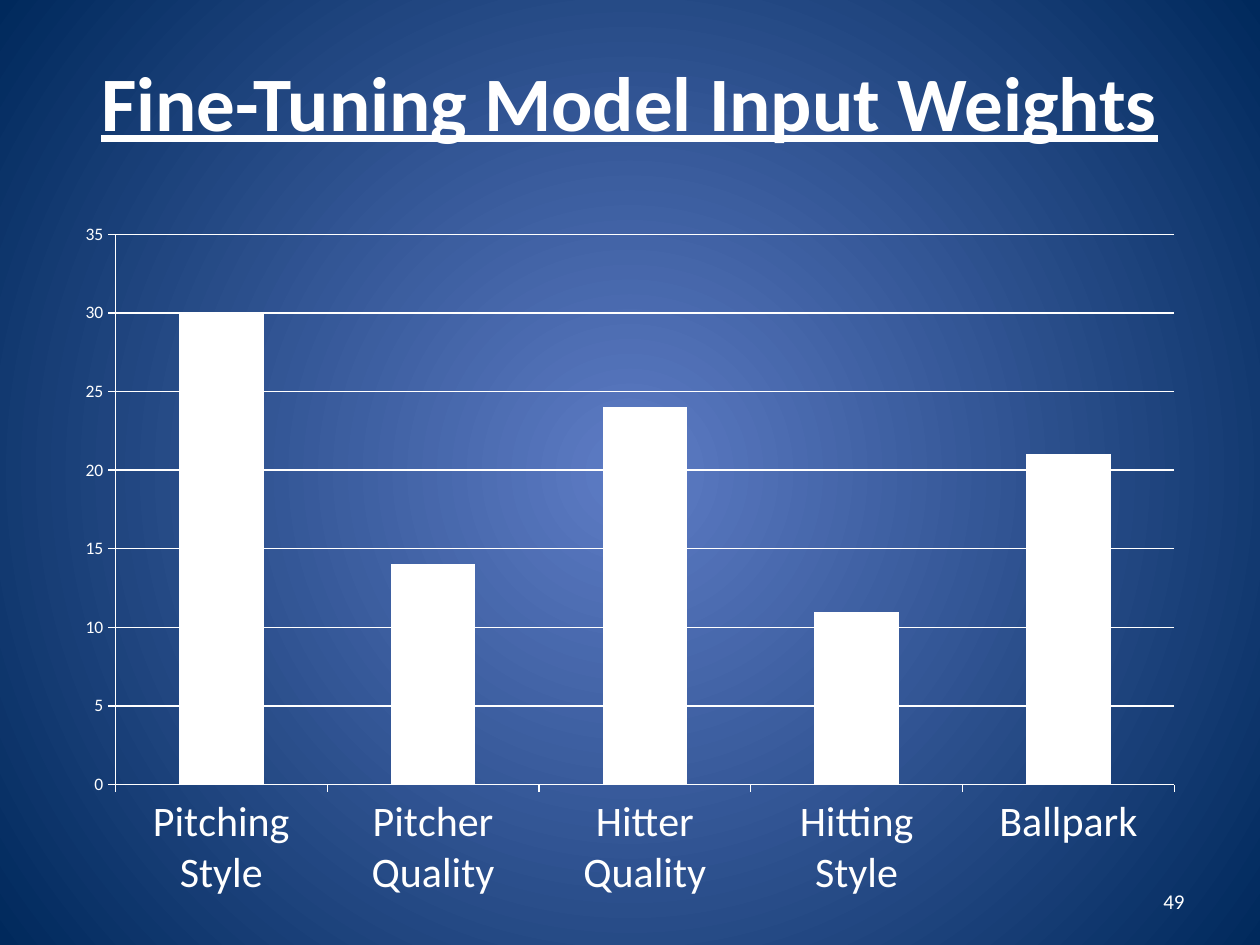
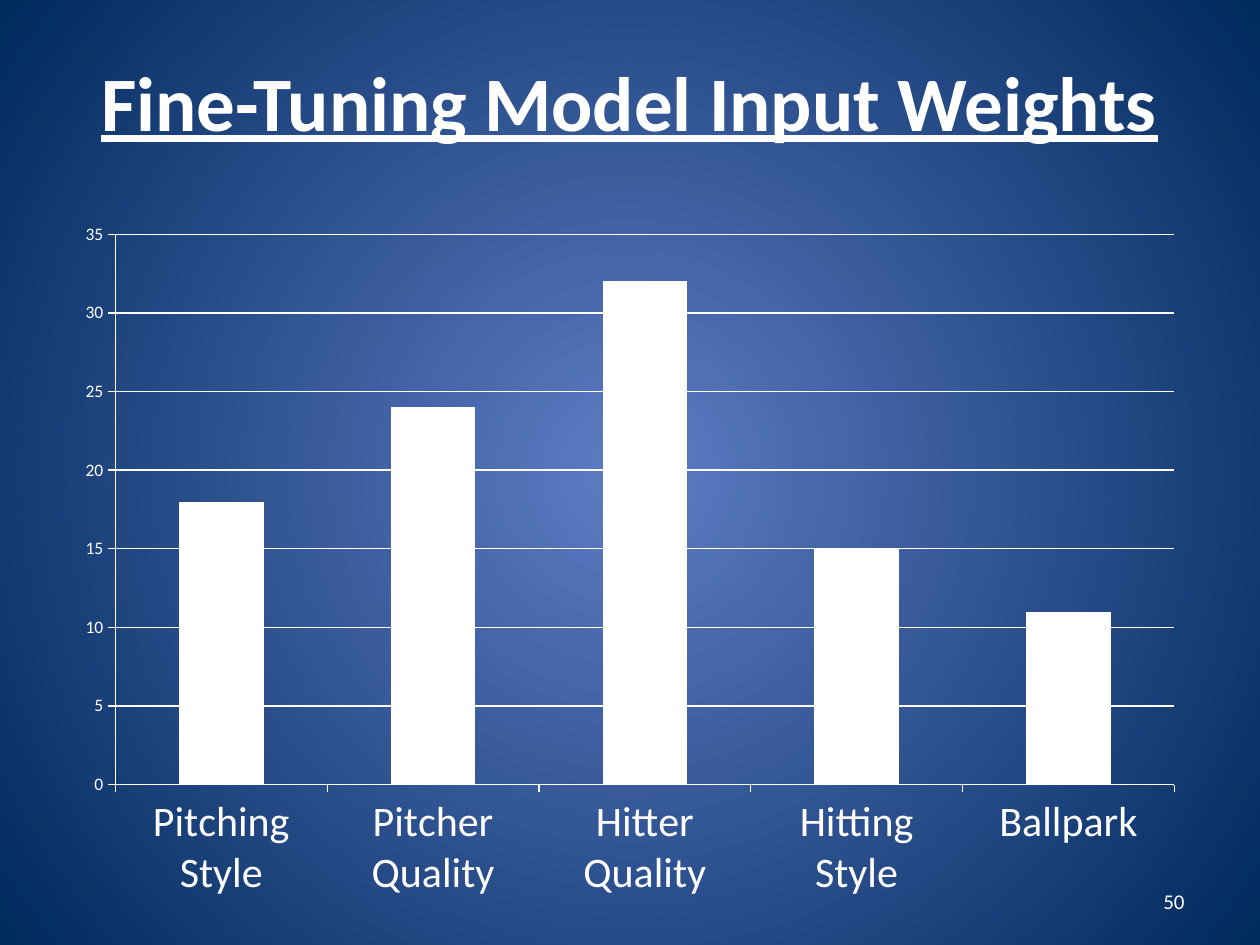
from dataclasses import dataclass

from pptx import Presentation, util as u
from pptx.chart.data import CategoryChartData
from pptx.dml.color import RGBColor
from pptx.enum import chart as charts, text
from pptx.oxml import parse_xml
from pptx.oxml.ns import nsdecls, qn


@dataclass(frozen=True)
class Theme:
    font: str = "Calibri"
    ink: RGBColor = RGBColor(0xFF, 0xFF, 0xFF)
    glow: RGBColor = RGBColor(0x5E, 0x7C, 0xC5)
    edge: RGBColor = RGBColor(0x00, 0x29, 0x5C)
    title: int = 44
    label: int = 24
    number: int = 12
    scale: int = 10
    line: float = 0.75


class Deck:
    def __init__(self, theme):
        self.theme = theme
        self.file = Presentation()
        self.file.slide_width = u.Inches(10)
        self.file.slide_height = u.Inches(7.5)
        self.slide = None

    def add_slide(self):
        self.slide = self.file.slides.add_slide(self.file.slide_layouts[6])
        fill = self.slide.background.fill
        fill.gradient()
        for stop, color in zip(fill.gradient_stops, (self.theme.glow, self.theme.edge)):
            stop.color.rgb = color
        linear = self.slide.element.find(".//" + qn("a:lin"))
        linear.getparent().replace(linear, parse_xml(
            f'<a:path {nsdecls("a")} path="circle">'
            '<a:fillToRect l="50000" t="50000" r="50000" b="50000"/></a:path>'))

    def style(self, font, size):
        font.name = self.theme.font
        font.size = u.Pt(size)
        font.color.rgb = self.theme.ink

    def add_text(self, words, box, size, align, strong=False):
        frame = self.slide.shapes.add_textbox(*map(u.Inches, box)).text_frame
        frame.word_wrap = True
        frame.vertical_anchor = text.MSO_ANCHOR.MIDDLE
        line = frame.paragraphs[0]
        line.alignment = align
        run = line.add_run()
        run.text = words
        self.style(run.font, size)
        run.font.bold = run.font.underline = strong

    def add_title(self, words):
        self.add_text(words, (0.5, 0.17, 9, 1.25), self.theme.title,
                      text.PP_ALIGN.CENTER, strong=True)

    def add_number(self, number):
        self.add_text(str(number), (7.17, 6.95, 2.33, 0.4), self.theme.number,
                      text.PP_ALIGN.RIGHT)

    def rule(self, line):
        line.color.rgb = self.theme.ink
        line.width = u.Pt(self.theme.line)

    def add_columns(self, names, values):
        data = CategoryChartData()
        data.categories = names
        data.add_series("Series 1", values)
        chart = self.slide.shapes.add_chart(
            charts.XL_CHART_TYPE.COLUMN_CLUSTERED,
            *map(u.Inches, (0.5, 1.67, 9, 5.58)), data).chart
        chart.has_legend = chart.has_title = False
        self.style(chart.font, self.theme.scale)

        plot = chart.plots[0]
        plot.gap_width = 150
        plot.vary_by_categories = False
        fill = plot.series[0].format.fill
        fill.solid()
        fill.fore_color.rgb = self.theme.ink

        axes = ((chart.category_axis, self.theme.label),
                (chart.value_axis, self.theme.scale))
        for axis, size in axes:
            axis.major_tick_mark = charts.XL_TICK_MARK.OUTSIDE
            axis.minor_tick_mark = charts.XL_TICK_MARK.NONE
            self.rule(axis.format.line)
            self.style(axis.tick_labels.font, size)
        scale = chart.value_axis
        scale.minimum_scale, scale.maximum_scale, scale.major_unit = 0, 35, 5
        scale.has_major_gridlines = True
        self.rule(scale.major_gridlines.format.line)


def main():
    inputs = ("Pitching Style", "Pitcher Quality", "Hitter Quality",
              "Hitting Style", "Ballpark")
    weights = ((30, 14, 24, 11, 21), (18, 24, 32, 15, 11))
    deck = Deck(Theme())
    for number, values in enumerate(weights, 49):
        deck.add_slide()
        deck.add_title("Fine-Tuning Model Input Weights")
        deck.add_number(number)
        deck.add_columns(inputs, values)
    deck.file.save("out.pptx")


if __name__ == "__main__":
    main()
